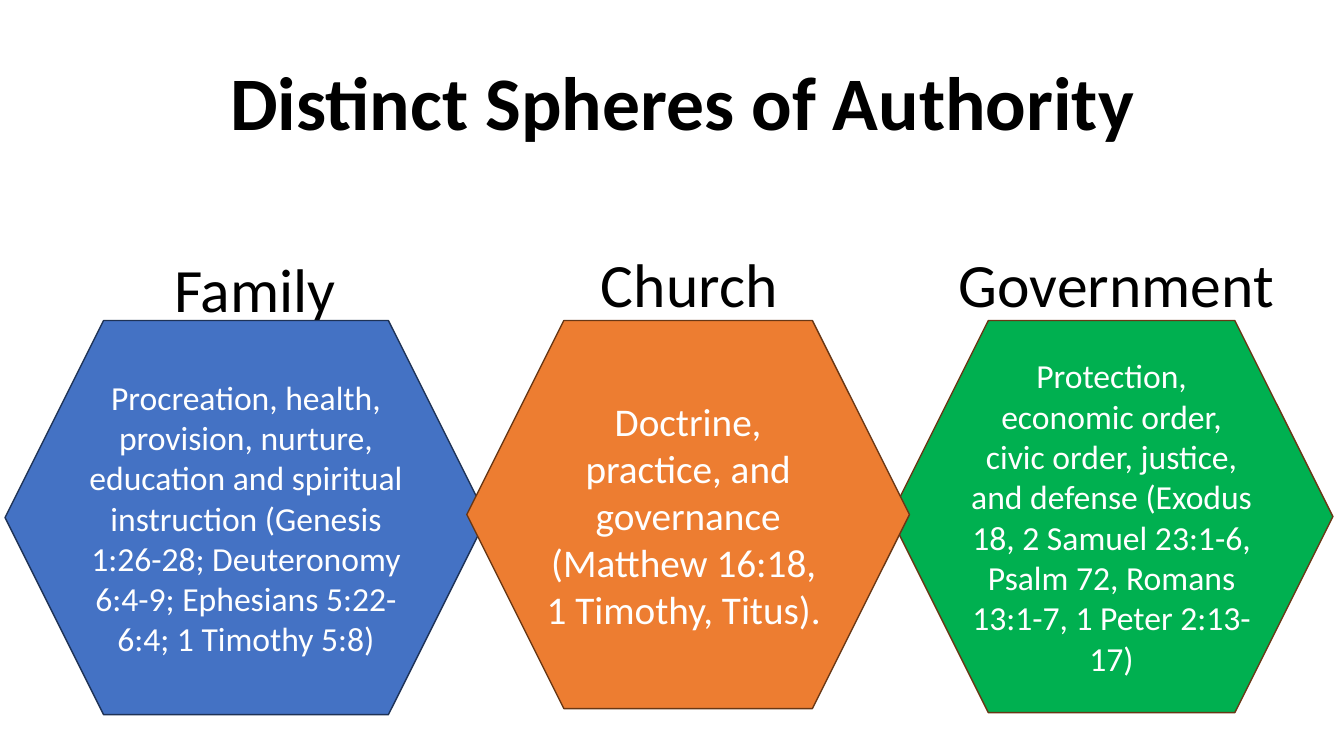
from pptx import Presentation
from pptx.dml.color import RGBColor
from pptx.enum.shapes import MSO_SHAPE
from pptx.enum.text import MSO_ANCHOR, MSO_AUTO_SIZE, PP_ALIGN
from pptx.util import Inches, Pt

# Content
HEADING = "Distinct Spheres of Authority"
HEADING_BOX = (1.4, 0.5, 10.74, 1.01)

# Name and box of each label; the first one is the title placeholder
LABELS = [
    ("Church", (5.86, 2.23, 2.21, 1.24)),
    ("Family", (1.63, 2.28, 2.21, 1.24)),
    ("Government", (9.41, 2.23, 3.49, 1.24)),
]

# Left, width, height, fill, outline, text size, paragraphs; back to front
HEXAGON_TOP = 3.18
SPHERES = [
    (0.05, 4.78, 3.91, "4472C4", "1E3256", 24, [
        "Procreation, health, provision, nurture, education and spiritual "
        "instruction (Genesis 1:26-28; Deuteronomy 6:4-9; "
        "Ephesians 5:22-6:4; 1 Timothy 5:8)"]),
    (8.83, 4.39, 3.89, "00B050", "683715", 24, [
        "Protection, economic order, civic order, justice, and defense "
        "(Exodus 18, 2 Samuel 23:1-6, Psalm 72, Romans 13:1-7, "
        "1 Peter 2:13-17)"]),
    (4.63, 4.39, 3.85, "ED7D31", "683715", 28, [
        "Doctrine, practice, and governance (Matthew 16:18, ",
        "1 Timothy, Titus). "]),
]


def color(value):
    return RGBColor.from_string(value)


def write(shape, paragraphs, font, layout, anchor=MSO_ANCHOR.MIDDLE):
    """Fill a shape with text, formatting each paragraph and run."""
    frame = shape.text_frame
    frame.word_wrap = True
    frame.auto_size = MSO_AUTO_SIZE.NONE
    frame.vertical_anchor = anchor
    frame.text = "\n".join(paragraphs)
    for para in frame.paragraphs:
        for name, value in layout.items():
            setattr(para, name, value)
        for span in para.runs:
            span.font.color.rgb = color(font["color"])
            span.font.name = "Calibri"
            span.font.size = Pt(font["size"])
            span.font.bold = font.get("bold", False)


def place(shape, box):
    for name, value in zip(("left", "top", "width", "height"), box):
        setattr(shape, name, Inches(value))


deck = Presentation()
deck.slide_width, deck.slide_height = Inches(13.33), Inches(7.5)
page = deck.slides.add_slide(deck.slide_layouts[5])
centered = {"alignment": PP_ALIGN.CENTER}

# Labels above the hexagons
for index, (name, box) in enumerate(LABELS):
    if index == 0:
        label = page.shapes.title
        place(label, box)
    else:
        label = page.shapes.add_textbox(*map(Inches, box))
    write(label, [name], {"size": 44, "color": "000000"},
          {"alignment": PP_ALIGN.LEFT, "line_spacing": 0.9})

# Heading
heading = page.shapes.add_textbox(*map(Inches, HEADING_BOX))
write(heading, [HEADING], {"size": 54, "color": "000000", "bold": True},
      centered, MSO_ANCHOR.TOP)

# Hexagons, the middle one in front
for left, width, height, fill, outline, size, paragraphs in SPHERES:
    box = (left, HEXAGON_TOP, width, height)
    hexagon = page.shapes.add_shape(MSO_SHAPE.HEXAGON, *map(Inches, box))
    hexagon.shadow.inherit = False
    hexagon.fill.solid()
    hexagon.fill.fore_color.rgb = color(fill)
    hexagon.line.color.rgb = color(outline)
    hexagon.line.width = Pt(1)
    write(hexagon, paragraphs, {"size": size, "color": "FFFFFF"}, centered)

deck.save("out.pptx")
